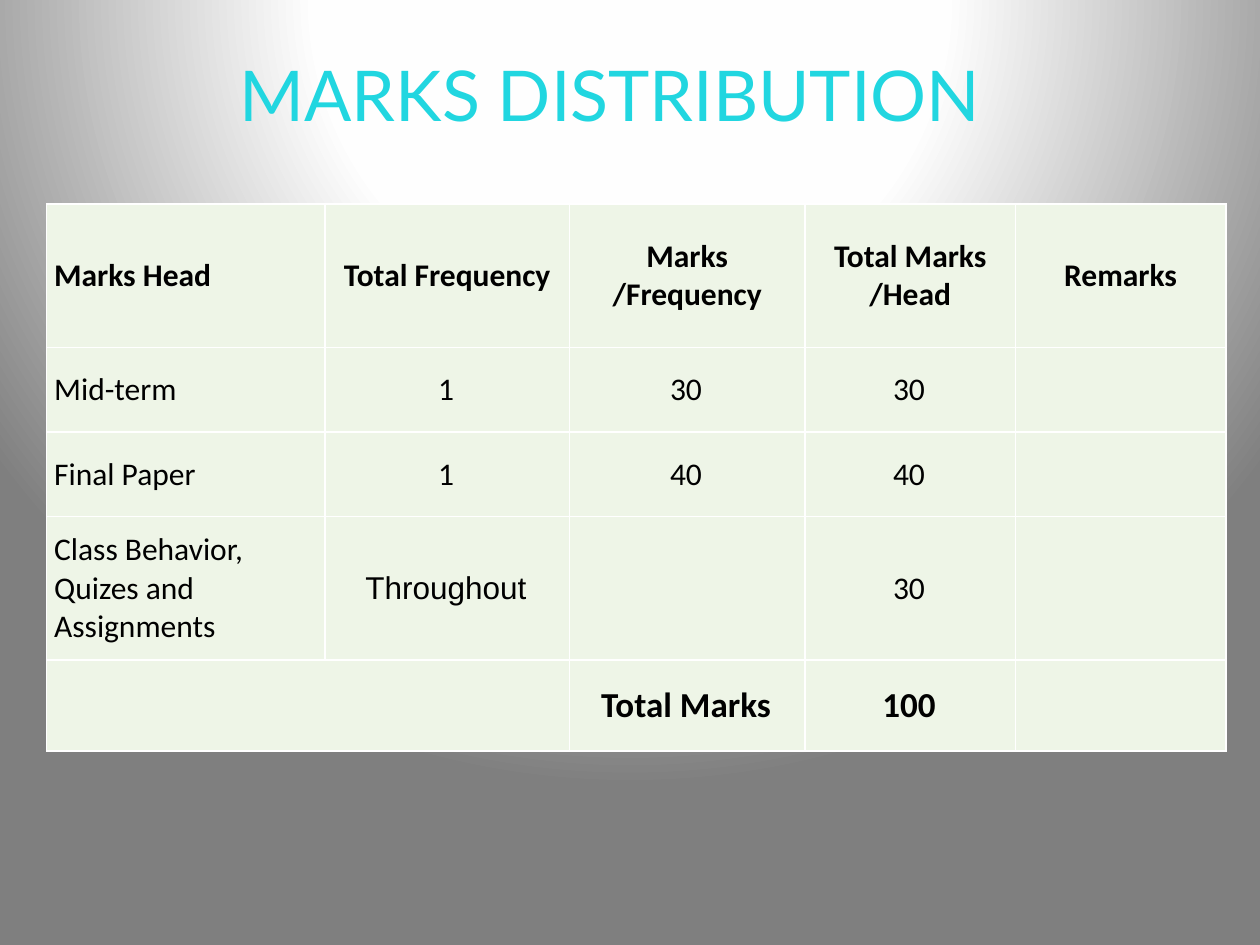
from pptx import Presentation
from pptx.dml.color import RGBColor
from pptx.enum.text import MSO_ANCHOR as ANCHOR, PP_ALIGN as ALIGN
from pptx.oxml import parse_xml
from pptx.util import Inches, Pt

NS = 'xmlns:a="http://schemas.openxmlformats.org/drawingml/2006/main"'
rgb = RGBColor.from_string


def gradient(stops, direction):
    marks = "".join(f'<a:gs pos="{pos * 1000}"><a:srgbClr val="{rgb(color)}"/></a:gs>'
                    for pos, color in stops)
    return parse_xml(f'<a:gradFill {NS} rotWithShape="1"><a:gsLst>{marks}</a:gsLst>'
                     f'{direction}</a:gradFill>')


def write(tf, text, size=18, font="Calibri", color="000000", bold=False, align=ALIGN.CENTER):
    tf.word_wrap = True
    p = tf.paragraphs[0]
    p.alignment = align
    r = p.add_run()
    r.text = text
    r.font.size, r.font.name, r.font.bold = Pt(size), font, bold
    r.font.color.rgb = rgb(color)
    return r


prs = Presentation()
prs.slide_width, prs.slide_height = Inches(10), Inches(7.5)
s = prs.slides.add_slide(prs.slide_layouts[6])

# Background: circular glow centred above the slide
fill = s.background.fill
fill.solid()
bg = s._element.cSld.bg.bgPr
bg.replace(bg[0], gradient(
    [(0, "FFFFFF"), (40, "FEFEFE"), (100, "7F7F7F")],
    '<a:path path="circle"><a:fillToRect l="50000" t="-80000" r="50000" b="180000"/></a:path>'))

# Title with gradient lettering
sp = s.shapes.add_textbox(Inches(1.3), Inches(0.36), Inches(7.08), Inches(0.77))
r = write(sp.text_frame, "MARKS DISTRIBUTION", size=40, font="Lato", color="21D6E0")
r_pr = r.font._element
r_pr.replace(r_pr[0], gradient(
    [(0, "03D4A8"), (25, "21D6E0"), (75, "0087E6"), (100, "005CBF")],
    '<a:lin ang="16200000" scaled="0"/>'))

# Marks table
rows = [
    ["Marks Head", "Total Frequency", "Marks /Frequency", "Total Marks /Head", "Remarks"],
    ["Mid-term", "1", "30", "30", ""],
    ["Final Paper", "1", "40", "40", ""],
    ["Class Behavior, Quizes and Assignments", "Throughout", "", "30", ""],
    ["", "", "Total Marks", "100", ""],
]
widths = [2.21, 1.94, 1.87, 1.67, 1.67]
heights = [1.14, 0.67, 0.67, 1.14, 0.72]
last = len(rows) - 1
table = s.shapes.add_table(len(rows), len(widths), Inches(0.37), Inches(1.62),
                           Inches(sum(widths)), Inches(sum(heights))).table
table.first_row = table.horz_banding = False
for col, width in zip(table.columns, widths):
    col.width = Inches(width)
for row, height in zip(table.rows, heights):
    row.height = Inches(height)

for i, texts in enumerate(rows):
    for j, text in enumerate(texts):
        cell = table.cell(i, j)
        cell.vertical_anchor = ANCHOR.MIDDLE
        cell.margin_left = cell.margin_top = cell.margin_bottom = Inches(0.06)
        cell.margin_right = Inches(0.08 if i else 0.06)
        cell.fill.solid()
        cell.fill.fore_color.rgb = rgb("EEF5E7")
        for k, side in enumerate("LRTB"):
            cell._tc.tcPr.insert(k, parse_xml(
                f'<a:ln{side} {NS} w="12700"><a:solidFill><a:srgbClr val="{rgb("FFFFFF")}"/>'
                f'</a:solidFill></a:ln{side}>'))
        if text:
            write(cell.text_frame, text, size=20 if i == last else 18,
                  font="Arial" if text == "Throughout" else "Calibri",
                  bold=i in (0, last), align=ALIGN.CENTER if j else ALIGN.LEFT)
table.cell(last, 0).merge(table.cell(last, 1))

prs.save("out.pptx")
